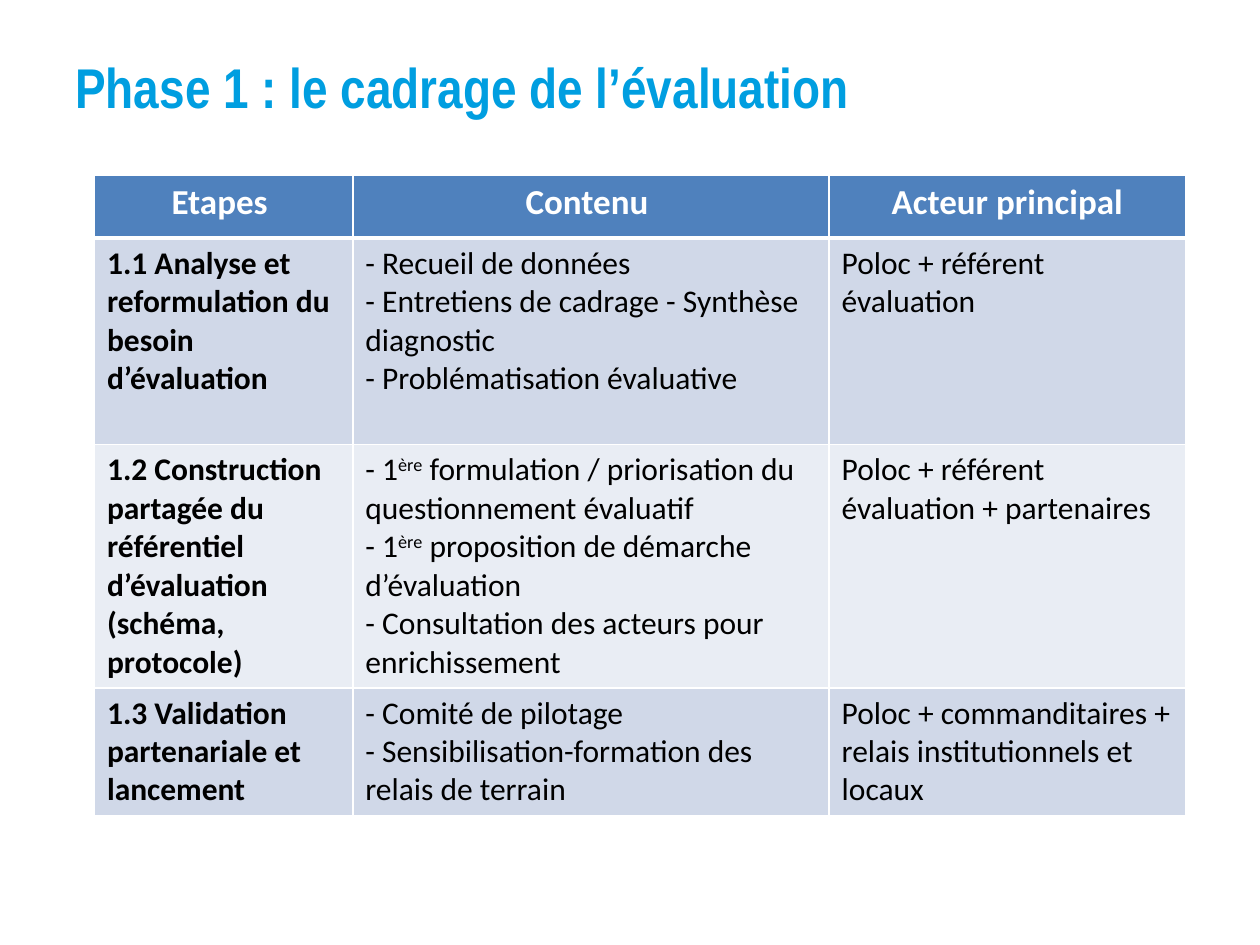
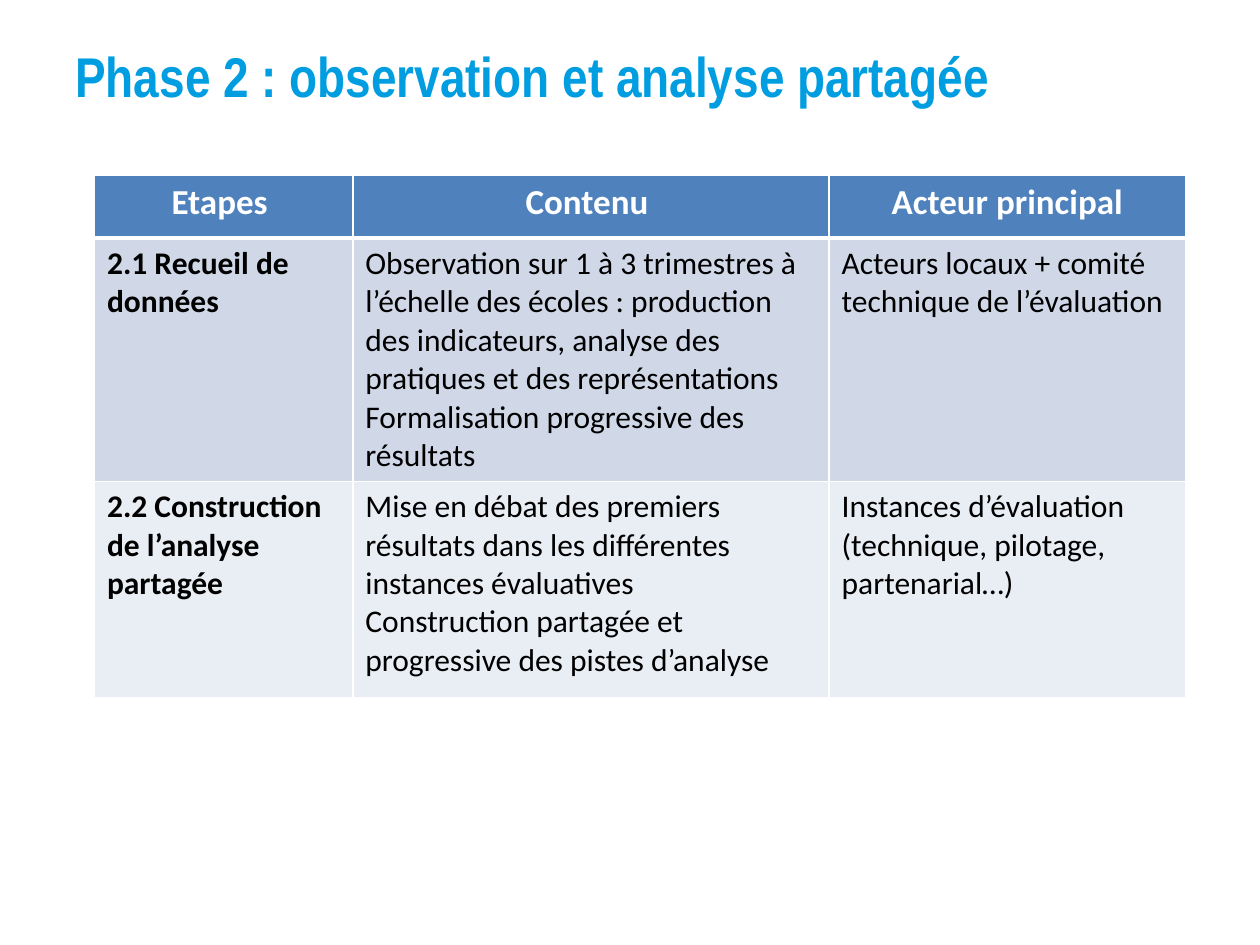
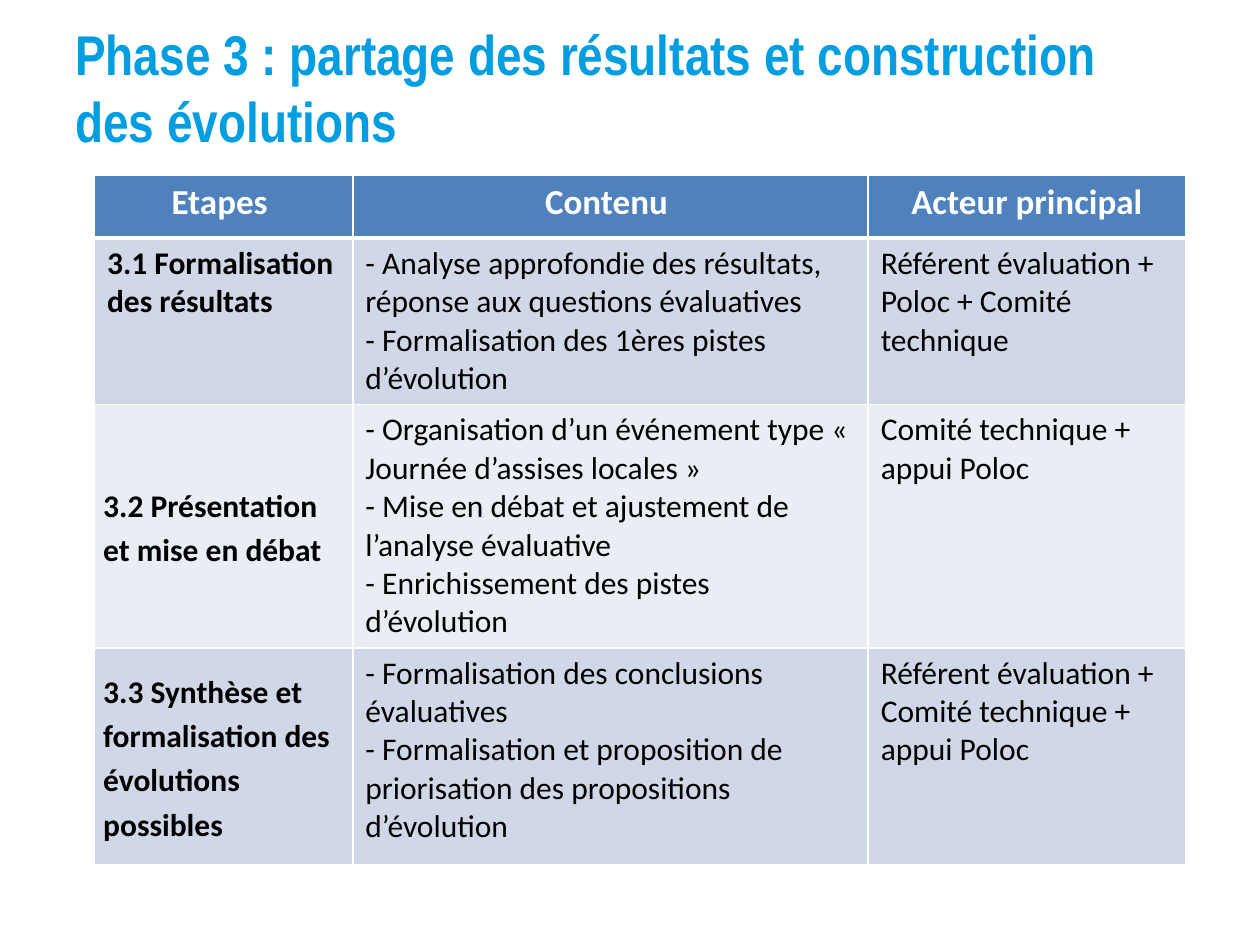
"""Build three slides describing the phases of a shared evaluation."""
from dataclasses import dataclass
from typing import Any

from lxml import etree
from pptx import Presentation
from pptx.dml.color import RGBColor
from pptx.enum.text import MSO_ANCHOR, MSO_AUTO_SIZE, PP_ALIGN
from pptx.oxml.ns import qn
from pptx.util import Pt

CENTER = PP_ALIGN.CENTER
LEFT = PP_ALIGN.LEFT
MIDDLE = MSO_ANCHOR.MIDDLE
NO_AUTOSIZE = MSO_AUTO_SIZE.NONE

TITLE_COLOR = "009EE0"
HEADER_COLOR = "4F81BD"
BAND_COLORS = ("D0D8E8", "E9EDF4")
WHITE = "FFFFFF"
BLACK = "000000"

TITLE_FONT = {"name": "Arial Narrow", "size": Pt(32), "bold": True}
HEADER_FONT = {"name": "Calibri", "size": Pt(20), "bold": True}
STEP_FONT = {"name": "Calibri", "size": Pt(18), "bold": True}
BODY_FONT = {**STEP_FONT, "bold": False}
TITLE_FRAME = {"word_wrap": True, "auto_size": NO_AUTOSIZE, "vertical_anchor": MIDDLE}
CENTERED_CELL = {
    "vertical_anchor": MIDDLE,
    "margin_left": Pt(5),
    "margin_right": Pt(5),
    "margin_top": Pt(0),
    "margin_bottom": Pt(0),
}

HEADINGS = ("Etapes ", "Contenu ", "Acteur principal")
HEADER_HEIGHT = 36
TABLE_LEFT, TABLE_TOP, TABLE_WIDTH = 54, 100, 623.5
STEP_WIDTH = 147.6
WIDE_CONTENT, NARROW_CONTENT = 294.5, 272.2


@dataclass(frozen=True)
class Step:
    """One step of a phase; text between carets is raised."""

    name: str
    contents: tuple[str, ...]
    actor: str
    height: float
    centered: bool = False


@dataclass(frozen=True)
class Phase:
    """One slide: a title and its table of steps."""

    title: str
    steps: tuple[Step, ...]
    title_top: float = 4.3
    content_width: float = NARROW_CONTENT


PHASES = (
    Phase(
        "Phase 1 : le cadrage de l’évaluation",
        (
            Step(
                "1.1 Analyse et reformulation du besoin d’évaluation",
                (
                    "- Recueil de données",
                    "- Entretiens de cadrage - Synthèse diagnostic",
                    "- Problématisation évaluative",
                ),
                "Poloc + référent évaluation",
                118,
            ),
            Step(
                "1.2 Construction partagée du référentiel d’évaluation (schéma, protocole)",
                (
                    "- 1^ère^ formulation / priorisation du questionnement évaluatif",
                    "- 1^ère^ proposition de démarche d’évaluation",
                    "- Consultation des acteurs pour enrichissement",
                ),
                "Poloc + référent évaluation + partenaires",
                123.8,
            ),
            Step(
                "1.3 Validation partenariale et lancement",
                (
                    "- Comité de pilotage",
                    "- Sensibilisation-formation des relais de terrain",
                ),
                "Poloc + commanditaires + relais institutionnels et locaux",
                73.4,
            ),
        ),
    ),
    Phase(
        "Phase 2 : observation et analyse partagée",
        (
            Step(
                "2.1 Recueil de données",
                (
                    "Observation sur 1 à 3 trimestres à l’échelle des écoles : production "
                    "des indicateurs, analyse des pratiques et des représentations",
                    "Formalisation progressive des résultats",
                ),
                "Acteurs locaux + comité technique de l’évaluation",
                118,
            ),
            Step(
                "2.2 Construction de l’analyse partagée",
                (
                    "Mise en débat des premiers résultats dans les différentes instances évaluatives",
                    "Construction partagée et progressive des pistes d’analyse",
                ),
                "Instances d’évaluation (technique, pilotage, partenarial…)",
                123.8,
            ),
        ),
        title_top=-2.2,
    ),
    Phase(
        "Phase 3 : partage des résultats et construction des évolutions",
        (
            Step(
                "3.1 Formalisation des résultats",
                (
                    "- Analyse approfondie des résultats, réponse aux questions évaluatives",
                    "- Formalisation des 1ères pistes d’évolution",
                ),
                "Référent évaluation + Poloc + Comité technique",
                71.3,
            ),
            Step(
                "3.2 Présentation et mise en débat",
                (
                    "- Organisation d’un événement type « Journée d’assises locales »",
                    "- Mise en débat et ajustement de l’analyse évaluative",
                    "- Enrichissement des pistes d’évolution",
                ),
                "Comité technique + appui Poloc",
                123.8,
                centered=True,
            ),
            Step(
                "3.3 Synthèse et formalisation des évolutions possibles",
                (
                    "- Formalisation des conclusions évaluatives",
                    "- Formalisation et proposition de priorisation des propositions d’évolution",
                ),
                "Référent évaluation + Comité technique + appui Poloc",
                123.8,
                centered=True,
            ),
        ),
        content_width=WIDE_CONTENT,
    ),
)


def rgb(color: str) -> RGBColor:
    """Turn a hex string into a colour."""
    return RGBColor.from_string(color)


def apply_format(target: Any, values: dict[str, Any]) -> None:
    """Set each format value on the target."""
    for attribute, value in values.items():
        setattr(target, attribute, value)


def write(frame: Any, lines: tuple[str, ...], font: dict[str, Any], color: str,
          layout: dict[str, Any]) -> None:
    """Write one paragraph per line, raising the text between carets."""
    for index, line in enumerate(lines):
        paragraph = frame.add_paragraph() if index else frame.paragraphs[0]
        apply_format(paragraph, layout)
        for part_index, part in enumerate(line.split("^")):
            run = paragraph.add_run()
            run.text = part
            apply_format(run.font, font)
            run.font.color.rgb = rgb(color)
            if part_index % 2:
                run._r.get_or_add_rPr().set("baseline", "30000")


def style_cell(cell: Any, row: int) -> None:
    """Give a cell white borders, heavier under the header, and its band colour."""
    properties = cell._tc.get_or_add_tcPr()
    widths = {"lnL": 1, "lnR": 1, "lnT": 3 if row == 1 else 1, "lnB": 3 if row == 0 else 1}
    for edge, width in widths.items():
        border = etree.SubElement(properties, qn(f"a:{edge}"), w=str(Pt(width)))
        paint = etree.SubElement(border, qn("a:solidFill"))
        etree.SubElement(paint, qn("a:srgbClr"), val=WHITE)
    cell.fill.solid()
    cell.fill.fore_color.rgb = rgb(BAND_COLORS[(row - 1) % 2] if row else HEADER_COLOR)


def add_title(slide: Any, phase: Phase) -> None:
    """Write the phase title."""
    title = slide.shapes.add_textbox(Pt(36), Pt(phase.title_top), Pt(648), Pt(90))
    apply_format(title.text_frame, TITLE_FRAME)
    write(title.text_frame, (phase.title,), TITLE_FONT, TITLE_COLOR, {"alignment": LEFT})


def add_steps(slide: Any, phase: Phase) -> None:
    """Draw the table of steps."""
    heights = (HEADER_HEIGHT, *(step.height for step in phase.steps))
    actor_width = TABLE_WIDTH - STEP_WIDTH - phase.content_width
    table = slide.shapes.add_table(
        len(heights), len(HEADINGS), Pt(TABLE_LEFT), Pt(TABLE_TOP),
        Pt(TABLE_WIDTH), Pt(sum(heights)),
    ).table
    for column, width in zip(table.columns, (STEP_WIDTH, phase.content_width, actor_width)):
        column.width = Pt(width)
    for row_index, (row, height) in enumerate(zip(table.rows, heights)):
        row.height = Pt(height)
        for cell in row.cells:
            style_cell(cell, row_index)
    for column_index, heading in enumerate(HEADINGS):
        write(table.cell(0, column_index).text_frame, (heading,), HEADER_FONT, WHITE,
              {"alignment": CENTER})
    for row_index, step in enumerate(phase.steps, start=1):
        name, content, actor = (table.cell(row_index, column) for column in range(3))
        if step.centered:
            apply_format(name, CENTERED_CELL)
        name_layout = {"line_spacing": 1.15} if step.centered else {}
        write(name.text_frame, (step.name,), STEP_FONT, BLACK, name_layout)
        write(content.text_frame, step.contents, BODY_FONT, BLACK, {})
        write(actor.text_frame, (step.actor,), BODY_FONT, BLACK, {})


def main() -> None:
    """Build and save the presentation."""
    presentation = Presentation()
    apply_format(presentation, {"slide_width": Pt(720), "slide_height": Pt(540)})
    for phase in PHASES:
        slide = presentation.slides.add_slide(presentation.slide_layouts[6])
        add_title(slide, phase)
        add_steps(slide, phase)
    presentation.save("out.pptx")


if __name__ == "__main__":
    main()
